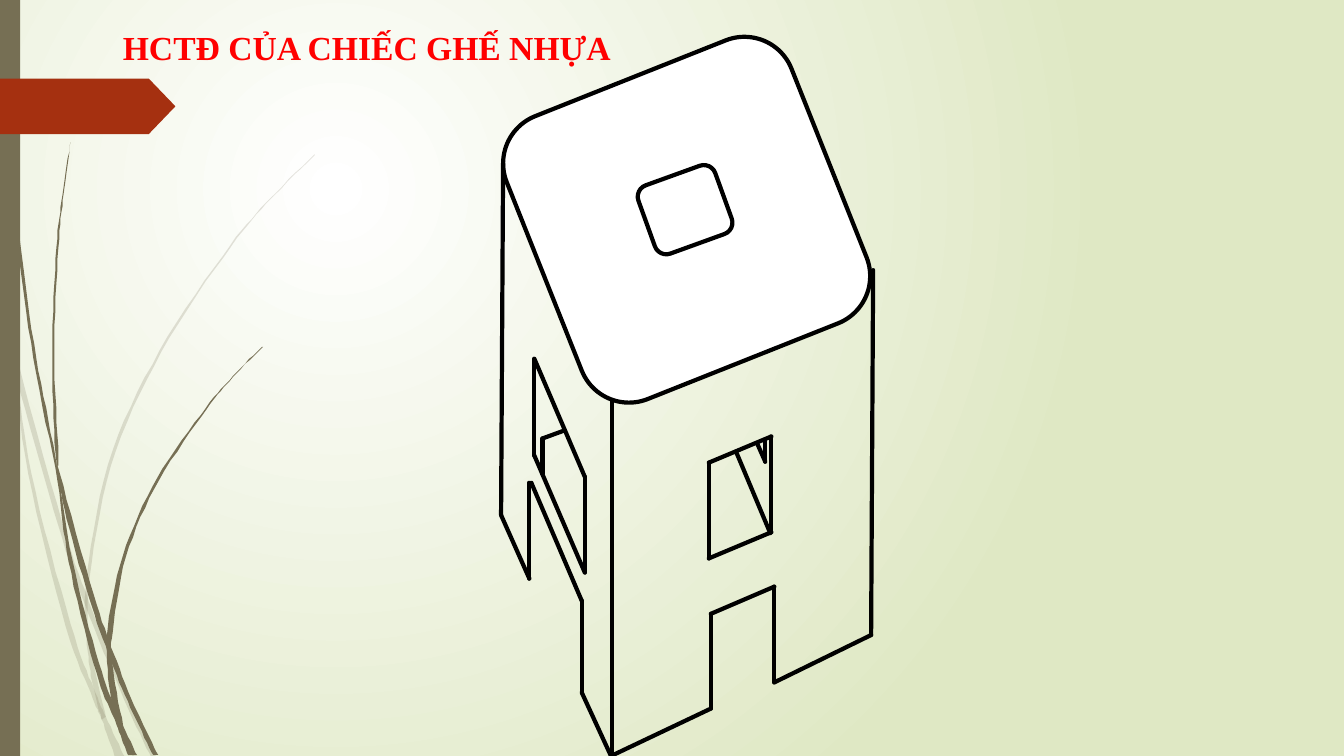
import itertools

import lxml.etree
import pptx
import pptx.dml.color
import pptx.enum.shapes
import pptx.enum.text
import pptx.oxml.ns
import pptx.util

PX = 9144  # EMU in one px: 100 px to the inch
SHAPE = pptx.enum.shapes.MSO_SHAPE
qn = pptx.oxml.ns.qn

OLIVE = "766F54"

# Each blade is its left edge and its right edge, from tip to root.
PALE_BLADES = [
    ([(0, 299), (10, 344), (28, 470), (65, 621), (92, 693), (101, 714), (114, 751)],
     [(0, 282), (9, 322), (17, 376), (31, 469), (70, 619), (93, 683), (105, 711), (124, 751)]),
    ([(14, 345), (17, 376), (58, 522), (84, 599), (123, 694), (150, 751)],
     [(14, 345), (62, 520), (92, 607), (127, 692), (155, 751)]),
    ([(312, 153), (268, 197), (228, 244), (158, 348), (107, 461), (85, 584), (87, 646),
      (93, 683), (101, 714)],
     [(312, 154), (268, 198), (229, 245), (160, 349), (110, 462), (88, 584), (91, 646),
      (105, 711)]),
]
DARK_BLADES = [
    ([(3, 0), (7, 110), (17, 233), (33, 355), (57, 477), (68, 557), (93, 659), (111, 708),
      (131, 749)],
     [(4, 0), (8, 109), (19, 232), (36, 355), (55, 453), (72, 556), (98, 657), (116, 706),
      (136, 749)]),
    ([(70, 141), (62, 193), (56, 245), (52, 349), (55, 449), (64, 505), (88, 592),
      (110, 656), (132, 708), (152, 749)],
     [(70, 141), (63, 193), (58, 245), (54, 349), (58, 453), (60, 472), (93, 590),
      (113, 649), (136, 706), (157, 749)]),
    ([(260, 344), (231, 373), (204, 405), (156, 474), (122, 551), (106, 631), (110, 691),
      (117, 722), (127, 749)],
     [(261, 344), (231, 374), (205, 406), (158, 476), (125, 552), (111, 633), (111, 656),
      (122, 719), (133, 749)]),
]

STOOL_EDGES = [
    # sides and legs
    [(-1, 112), (-3, 461), (25, 524), (25, 429), (27, 429), (77, 546), (77, 637), (106, 700),
     (205, 653), (205, 559), (268, 532), (268, 627), (364, 580), (366, 218)],
    [(107, 348), (107, 700)],
    # left and right windows
    [(30, 306), (30, 402), (80, 518), (80, 423), (30, 306)],
    [(203, 409), (203, 504), (265, 478), (265, 383), (203, 409)],
    # inner edges seen through the windows
    [(60, 377), (38, 385), (38, 420)],
    [(230, 398), (264, 479)],
    [(251, 390), (259, 408), (259, 386)],
]


def px(n):
    return pptx.util.Emu(n * PX)


def rgb(hex_string):
    return pptx.dml.color.RGBColor.from_string(hex_string)


def paint(sp, fill, line=None):
    sp.shadow.inherit = False
    sp.fill.solid()
    sp.fill.fore_color.rgb = rgb(fill)
    if line:
        sp.line.color.rgb = rgb(line)
        sp.line.width = pptx.util.Pt(3)
    else:
        sp.line.fill.background()


def add_preset(s, preset, x, y, w, h, fill, line=None):
    sp = s.shapes.add_shape(preset, px(x), px(y), px(w), px(h))
    paint(sp, fill, line)
    return sp


def smooth(points, steps=8):
    """Sample a Catmull-Rom curve through the points."""
    padded = [points[0], *points, points[-1]]
    curve = [points[0]]
    for a, b, c, d in zip(padded, padded[1:], padded[2:], padded[3:]):
        for i in range(1, steps + 1):
            t = i / steps
            curve.append(tuple(
                (2 * q + (r - p) * t + (2 * p - 5 * q + 4 * r - u) * t ** 2
                 + (3 * q - p - 3 * r + u) * t ** 3) / 2
                for p, q, r, u in zip(a, b, c, d)))
    return curve


def add_grass(s, x, y, blades, alpha=None):
    for left, right in blades:
        outline = [(x + dx, y + dy) for dx, dy in smooth(left) + smooth(right)[::-1]]
        builder = s.shapes.build_freeform(*outline[0], scale=PX)
        builder.add_line_segments(outline[1:], close=True)
        sp = builder.convert_to_shape()
        paint(sp, OLIVE)
        if alpha:
            color = sp.element.spPr.find(qn("a:solidFill"))[0]
            lxml.etree.SubElement(color, qn("a:alpha"), val=str(alpha * 1000))


def add_edge(s, x, y, start, end):
    line = s.shapes.add_connector(
        pptx.enum.shapes.MSO_CONNECTOR.STRAIGHT,
        px(x + start[0]), px(y + start[1]), px(x + end[0]), px(y + end[1]))
    line.line.color.rgb = rgb("000000")
    line.line.width = pptx.util.Pt(3)
    spPr = line._element.spPr
    spPr.find(qn("a:ln")).set("cap", "rnd")
    lxml.etree.SubElement(spPr, qn("a:effectLst"))


def add_stool(s, x, y):
    seat = add_preset(s, SHAPE.ROUNDED_RECTANGLE, x + 29, y + 17, 304, 302, "FFFFFF", "000000")
    seat.rotation = 158.3
    for points in STOOL_EDGES:
        for start, end in itertools.pairwise(points):
            add_edge(s, x, y, start, end)
    hole = add_preset(s, SHAPE.ROUNDED_RECTANGLE, x + 139, y + 122, 81, 72, "FFFFFF", "000000")
    hole.rotation = 340.1


def add_title(s, x, y, w, h):
    tf = s.shapes.add_textbox(px(x), px(y), px(w), px(h)).text_frame
    tf.word_wrap = False
    tf.auto_size = pptx.enum.text.MSO_AUTO_SIZE.SHAPE_TO_FIT_TEXT
    p = tf.paragraphs[0]
    p.text = "HCTĐ CỦA CHIẾC GHẾ NHỰA"
    p.font.name = "Times New Roman"
    p.font.size = pptx.util.Pt(24)
    p.font.bold = True
    p.font.color.rgb = rgb("FF0000")


def set_background(s):
    """Radial gradient, white near the upper left."""
    fill = s.background.fill
    fill.gradient()
    for stop, color in zip(fill.gradient_stops, ("FFFFFF", "DFE8C4")):
        stop.color.rgb = rgb(color)
    grad = s.element.find(".//" + qn("a:gradFill"))
    grad.remove(grad.find(qn("a:lin")))
    circle = lxml.etree.Element(qn("a:path"), path="circle")
    lxml.etree.SubElement(circle, qn("a:fillToRect"),
                          l="50000", t="50000", r="100000", b="100000")
    grad.find(qn("a:gsLst")).addnext(circle)


def add_left_decoration(s, x, y):
    add_grass(s, x, y, PALE_BLADES, alpha=20)
    add_grass(s, x, y, DARK_BLADES)
    add_preset(s, SHAPE.RECTANGLE, x, y, 20, 750, OLIVE)
    tag = add_preset(s, SHAPE.PENTAGON, x, y + 78, 174, 55, "A53010")
    tag.adjustments[0] = 0.48


def main():
    prs = pptx.Presentation()
    prs.slide_width, prs.slide_height = px(1333), px(750)
    s = prs.slides.add_slide(prs.slide_layouts[6])
    set_background(s)
    add_left_decoration(s, 0, 0)
    add_stool(s, 500, 50)
    add_title(s, 112, 22, 509, 50)
    prs.save("out.pptx")


if __name__ == "__main__":
    main()
